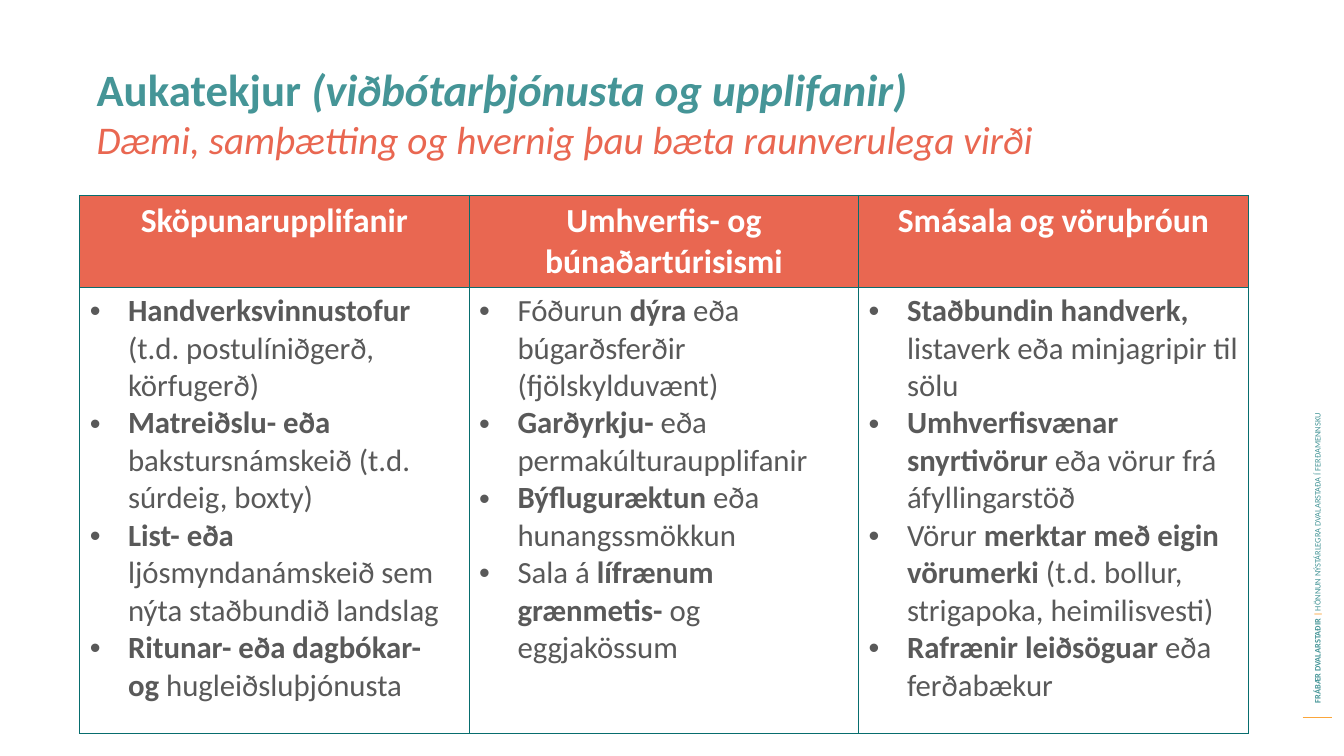
from lxml.etree import SubElement
from pptx import Presentation
from pptx.dml.color import RGBColor
from pptx.enum.shapes import MSO_CONNECTOR
from pptx.enum.text import MSO_ANCHOR, PP_ALIGN
from pptx.oxml import parse_xml
from pptx.oxml.ns import nsdecls, qn
from pptx.util import Inches, Pt

TEAL = RGBColor(0x45, 0x95, 0x97)
CORAL = RGBColor(0xE9, 0x67, 0x51)
ORANGE = RGBColor(0xFB, 0xA6, 0x3B)
GREY = RGBColor(0x59, 0x59, 0x59)
WHITE = RGBColor(0xFF, 0xFF, 0xFF)
BORDER = RGBColor(0x08, 0x6D, 0x6E)

HEADING = {"size": Pt(32), "bold": True, "color": TEAL}
TITLE = [
    [("Aukatekjur ", HEADING),
     ("(viðbótarþjónusta og upplifanir)", {**HEADING, "italic": True})],
    [("Dæmi, samþætting og hvernig þau bæta raunverulega virði",
      {"size": Pt(28), "bold": False, "italic": True, "color": CORAL})],
]
SIDE_LABEL = [[
    ("FRÁBÆR DVALARSTAÐIR ", {"size": Pt(6), "bold": True, "color": TEAL}),
    ("| ", {"size": Pt(6), "bold": True, "color": ORANGE}),
    ("HÖNNUN NÝSTÁRLEGRA DVALARSTAÐA Í FERÐAMENNSKU",
     {"size": Pt(6), "bold": False, "color": TEAL}),
]]
# Bold words stand between asterisks.
COLUMNS = {
    "Sköpunarupplifanir": [
        "*Handverksvinnustofur *(t.d. postulíniðgerð, körfugerð)",
        "*Matreiðslu- eða *bakstursnámskeið (t.d. súrdeig, boxty)",
        "*List- eða *ljósmyndanámskeið sem nýta staðbundið landslag",
        "*Ritunar- eða dagbókar- og *hugleiðsluþjónusta",
    ],
    "Umhverfis- og búnaðartúrisismi": [
        "Fóðurun *dýra *eða búgarðsferðir (fjölskylduvænt)",
        "*Garðyrkju- *eða permakúlturaupplifanir",
        "*Býfluguræktun *eða hunangssmökkun",
        "Sala á *lífrænum grænmetis- *og eggjakössum",
    ],
    "Smásala og vöruþróun": [
        "*Staðbundin handverk, *listaverk eða minjagripir til sölu",
        "*Umhverfisvænar snyrtivörur *eða vörur frá áfyllingarstöð",
        "Vörur *merktar með eigin vörumerki *(t.d. bollur, strigapoka, heimilisvesti)",
        "*Rafrænir leiðsöguar *eða ferðabækur",
    ],
}
COLUMN_WIDTH = 3.863
ROW_HEIGHTS = [0.91, 4.43]


def write(frame, paragraphs, align=PP_ALIGN.LEFT, bulleted=False):
    for index, spans in enumerate(paragraphs):
        para = frame.add_paragraph() if index else frame.paragraphs[0]
        para.alignment = align
        if bulleted:
            properties = para._p.get_or_add_pPr()
            properties.set("marL", str(Inches(0.38)))
            properties.set("indent", str(-Inches(0.38)))
            SubElement(properties, qn("a:buFont")).set("typeface", "Arial")
            SubElement(properties, qn("a:buChar")).set("char", "•")
        for text, style in spans:
            span = para.add_run()
            span.text = text
            span.font.name = "Calibri"
            for name, value in style.items():
                if name == "color":
                    span.font.color.rgb = value
                else:
                    setattr(span.font, name, value)


def add_text(page, place, paragraphs):
    box = page.shapes.add_textbox(*map(Inches, place))
    box.text_frame.word_wrap = True
    write(box.text_frame, paragraphs)
    return box


def add_borders(cell):
    properties = cell._tc.get_or_add_tcPr()
    for index, side in enumerate("LRTB"):
        properties.insert(index, parse_xml(
            f'<a:ln{side} {nsdecls("a")} w="{Pt(1)}"><a:solidFill>'
            f'<a:srgbClr val="{BORDER}"/></a:solidFill></a:ln{side}>'))


def bullet_spans(line):
    return [(text, {"size": Pt(22), "bold": index % 2 == 1, "color": GREY})
            for index, text in enumerate(line.split("*")) if text]


def add_income_table(page):
    table = page.shapes.add_table(
        2, len(COLUMNS), Inches(0.79), Inches(1.94),
        Inches(COLUMN_WIDTH * len(COLUMNS)), Inches(sum(ROW_HEIGHTS))).table
    table.horz_banding = False
    for row, height in zip(table.rows, ROW_HEIGHTS):
        row.height = Inches(height)
    header_style = {"size": Pt(24), "bold": True, "color": WHITE}
    for index, (heading, lines) in enumerate(COLUMNS.items()):
        table.columns[index].width = Inches(COLUMN_WIDTH)
        header, body = table.cell(0, index), table.cell(1, index)
        header.fill.solid()
        header.fill.fore_color.rgb = CORAL
        body.fill.background()
        write(header.text_frame, [[(heading, header_style)]], PP_ALIGN.CENTER)
        write(body.text_frame, map(bullet_spans, lines), bulleted=True)
        add_borders(header)
        add_borders(body)


def main():
    deck = Presentation()
    deck.slide_width, deck.slide_height = Inches(13.33), Inches(7.5)
    page = deck.slides.add_slide(deck.slide_layouts[6])

    rule = page.shapes.add_connector(
        MSO_CONNECTOR.STRAIGHT, *map(Inches, (12.92, 7.12, 13.21, 7.12)))
    rule.line.color.rgb = ORANGE
    rule.line.width = Pt(0.75)
    SubElement(rule._element.spPr, qn("a:effectLst"))

    label = add_text(page, (10.18, 4.09, 5.77, 0.2), SIDE_LABEL)
    label.rotation = 270
    label.text_frame.vertical_anchor = MSO_ANCHOR.MIDDLE
    add_income_table(page)
    add_text(page, (0.86, 0.56, 11.61, 0.88), TITLE)
    deck.save("out.pptx")


if __name__ == "__main__":
    main()
